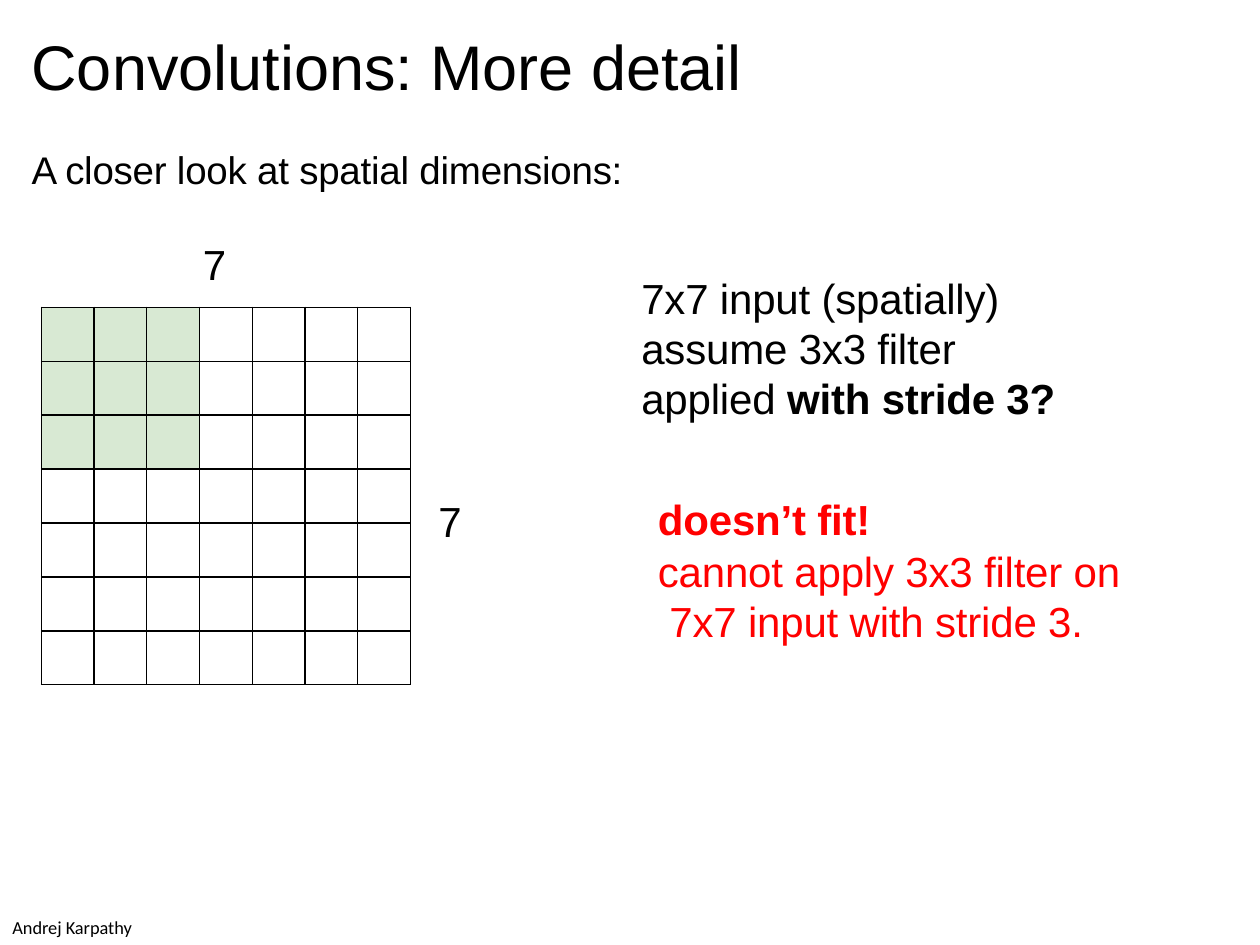
from pptx import Presentation
from pptx.dml.color import RGBColor as RGB
from pptx.enum.text import MSO_AUTO_SIZE as AutoSize
from pptx.oxml import parse_xml
from pptx.oxml.ns import nsdecls
from pptx.util import Pt

BLACK = RGB(0, 0, 0)
RED = RGB(0xFF, 0, 0)
GREEN = RGB(0xD8, 0xE9, 0xD3)
INPUT_SIZE = 7
FILTER_SIZE = 3
MARGINS = ("margin_left", "margin_top", "margin_right", "margin_bottom")
BODY = {"size": Pt(24), "name": "Arial"}
TIGHT = -10


def set_all(obj, values):
    for name, value in values.items():
        setattr(obj, name, value)


def add_run(p, text, font, spacing):
    for i, line in enumerate(text.split("\n")):
        if i:
            p.add_line_break()
        if line:
            r = p.add_run()
            r.text = line
            set_all(r.font, font)
            r.font.color.rgb = font.get("rgb", BLACK)
            if spacing:
                r._r.get_or_add_rPr().set("spc", str(spacing))


def add_text(s, box, paragraphs, color=BLACK, spacing=TIGHT, inset=True, **frame):
    tf = s.shapes.add_textbox(*map(Pt, box)).text_frame
    if inset:
        set_all(tf, dict.fromkeys(MARGINS, 0))
    set_all(tf, {"word_wrap": True, "auto_size": AutoSize.SHAPE_TO_FIT_TEXT, **frame})
    for i, (layout, runs) in enumerate(paragraphs):
        p = tf.add_paragraph() if i else tf.paragraphs[0]
        set_all(p, layout)
        for text, font in runs:
            add_run(p, text, {**font, "rgb": color}, spacing)


def border_cell(cell):
    tc_pr = cell._tc.get_or_add_tcPr()
    for i, side in enumerate(("lnL", "lnR", "lnT", "lnB")):
        tc_pr.insert(i, parse_xml(
            f'<a:{side} {nsdecls("a")} w="{Pt(0.75)}"><a:solidFill>'
            f'<a:srgbClr val="{BLACK}"/></a:solidFill></a:{side}>'))


def add_input_grid(s, left, top, width, height):
    box = map(Pt, (left, top, width, height))
    table = s.shapes.add_table(INPUT_SIZE, INPUT_SIZE, *box).table
    set_all(table, {"first_row": False, "horz_banding": False})
    for col in table.columns:
        col.width = Pt(width / INPUT_SIZE)
    for y, row in enumerate(table.rows):
        row.height = Pt(height / INPUT_SIZE)
        for x, cell in enumerate(row.cells):
            if max(x, y) < FILTER_SIZE:
                cell.fill.solid()
                cell.fill.fore_color.rgb = GREEN
            else:
                cell.fill.background()
            border_cell(cell)


def main():
    prs = Presentation()
    set_all(prs, {"slide_width": Pt(720), "slide_height": Pt(540)})
    s = prs.slides.add_slide(prs.slide_layouts[6])
    bold = {**BODY, "bold": True}
    leading = {"line_spacing": Pt(28.5)}

    add_text(s, (366.5, 156.2, 240, 88), [
        (leading, [("7x7 input (spatially)\nassume 3x3 filter\napplied ", BODY),
                   ("with stride 3?", bold)])])
    for left, top in ((116, 136), (250.5, 283)):
        add_text(s, (left, top, 15, 29.5), [({}, [(str(INPUT_SIZE), BODY)])])
    add_text(s, (18, 83.5, 685, 26.6), [
        ({}, [("A closer look at spatial dimensions:", {**BODY, "size": Pt(22)})])])
    add_input_grid(s, 23.6, 175.5, 211, 216)
    add_text(s, (376, 282.2, 268.5, 88.5), [
        ({"line_spacing": Pt(28.6)}, [("doesn’t fit!", bold)]),
        ({**leading, "space_before": Pt(1.1)},
         [("cannot apply 3x3 filter on\n 7x7 input with stride 3.", BODY)]),
    ], RED)
    add_text(s, (18, 16, 685, 44), [
        ({}, [("Convolutions: More detail", {**BODY, "size": Pt(36)})])], spacing=0)
    add_text(s, (0, 520, 84, 20), [
        ({}, [("Andrej Karpathy", {"size": Pt(10.5), "name": "Calibri"})])],
        spacing=0, inset=False, word_wrap=False)
    prs.save("out.pptx")


if __name__ == "__main__":
    main()
